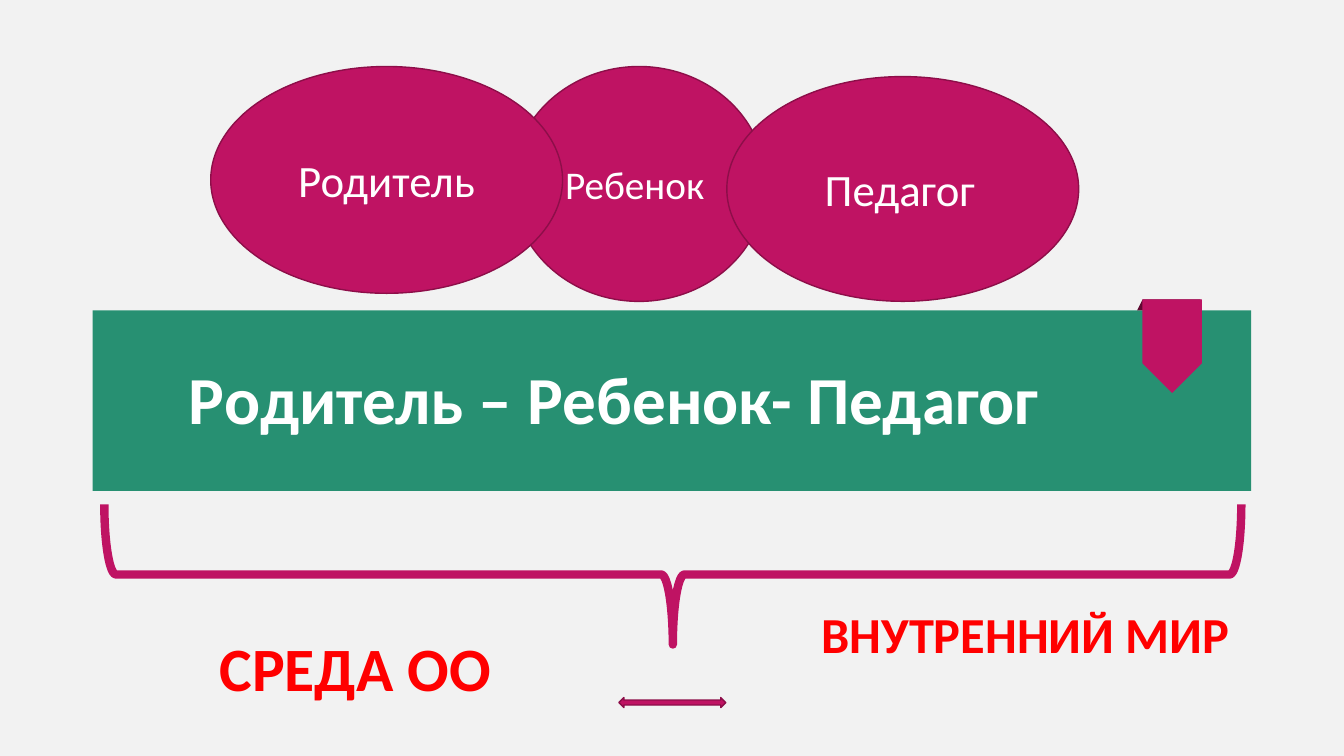
import pptx
import pptx.dml.color
import pptx.enum.shapes
import pptx.enum.text
import pptx.util

RGBColor = pptx.dml.color.RGBColor
Shape = pptx.enum.shapes.MSO_SHAPE
Align = pptx.enum.text.PP_ALIGN
Anchor = pptx.enum.text.MSO_ANCHOR
AutoSize = pptx.enum.text.MSO_AUTO_SIZE

PAPER = RGBColor(0xF2, 0xF2, 0xF2)
GREEN = RGBColor(0x27, 0x90, 0x72)
MAGENTA = RGBColor(0xBF, 0x13, 0x63)
OUTLINE = RGBColor(0x8D, 0x0E, 0x49)
FOLD = RGBColor(0x60, 0x09, 0x32)
WHITE = RGBColor(0xFF, 0xFF, 0xFF)
RED = RGBColor(0xFF, 0x00, 0x00)

TITLE_ONLY = 5


class SlideBuilder:
    """Places elements by left, top, width and height in percent of the slide."""

    font = "Calibri"

    def __init__(self, deck):
        self.width, self.height = deck.slide_width, deck.slide_height
        self.page = deck.slides.add_slide(deck.slide_layouts[TITLE_ONLY])
        self.page.background.fill.solid()
        self.page.background.fill.fore_color.rgb = PAPER

    def across(self, share):
        return round(self.width * share / 100)

    def down(self, share):
        return round(self.height * share / 100)

    def place(self, area):
        left, top, width, height = area
        return self.across(left), self.down(top), self.across(width), self.down(height)

    def shape(self, kind, area, fill=None, line=None, weight=1, turned=False):
        """Add a preset shape; a turned one fills the area after a quarter turn."""
        left, top, width, height = self.place(area)
        if turned:
            left, top = left + (width - height) // 2, top + (height - width) // 2
            width, height = height, width
        shape = self.page.shapes.add_shape(kind, left, top, width, height)
        shape.rotation = 90 if turned else 0
        shape.shadow.inherit = False
        if fill is None:
            shape.fill.background()
        else:
            shape.fill.solid()
            shape.fill.fore_color.rgb = fill
        if line is None:
            shape.line.fill.background()
        else:
            shape.line.color.rgb = line
            shape.line.width = pptx.util.Pt(weight)
        return shape

    def add_span(self, para, text, size, color, bold=False):
        span = para.add_run()
        span.text = text
        span.font.name = self.font
        span.font.size = pptx.util.Pt(size)
        span.font.bold = bold
        span.font.color.rgb = color

    def ellipse(self, area, spans):
        ellipse = self.shape(Shape.OVAL, area, MAGENTA, OUTLINE)
        ellipse.text_frame.vertical_anchor = Anchor.MIDDLE
        para = ellipse.text_frame.paragraphs[0]
        para.alignment = Align.CENTER
        for text, size in spans:
            self.add_span(para, text, size, WHITE)

    def label(self, area, text, size):
        box = self.page.shapes.add_textbox(*self.place(area))
        box.text_frame.word_wrap = True
        box.text_frame.auto_size = AutoSize.SHAPE_TO_FIT_TEXT
        self.add_span(box.text_frame.paragraphs[0], text, size, RED, bold=True)

    def title(self, area, text, size, right_margin, above):
        """Fill the title and bring it in front of the shape given as above."""
        title = self.page.shapes.title
        title.left, title.top, title.width, title.height = self.place(area)
        above.element.addnext(title.element)
        frame = title.text_frame
        frame.auto_size = AutoSize.NONE
        frame.word_wrap = True
        frame.vertical_anchor = Anchor.MIDDLE
        frame.margin_right = self.across(right_margin)
        para = frame.paragraphs[0]
        para.alignment = Align.CENTER
        para.line_spacing = 0.9
        self.add_span(para, text, size, WHITE, bold=True)


def main():
    deck = pptx.Presentation()
    deck.slide_width = pptx.util.Inches(13.33)
    deck.slide_height = pptx.util.Inches(7.5)
    slide = SlideBuilder(deck)

    slide.shape(Shape.RECTANGLE, (6.9, 41.07, 86.2, 23.87), GREEN)
    fold = slide.shape(Shape.PARALLELOGRAM, (84.6, 39.6, 4.73, 1.47), FOLD)
    fold.adjustments[0] = 0.51
    ribbon = slide.shape(Shape.PENTAGON, (85, 39.6, 4.43, 12.4), MAGENTA, turned=True)
    slide.title((6.9, 41.33, 86.27, 23.87), "Родитель – Ребенок- Педагог", 48,
                right_margin=9.45, above=ribbon)

    slide.ellipse((38.1, 8.8, 18.9, 31.07), [("Ребенок ", 28)])
    slide.ellipse((15.68, 8.8, 26.18, 30), [("Родитель", 32)])
    slide.ellipse((54.08, 10.13, 26.18, 29.73), [("Педагог", 32), (" ", 18)])

    slide.shape(Shape.RIGHT_BRACE, (7.76, 66.73, 84.6, 18.53),
                line=MAGENTA, weight=6, turned=True)
    slide.label((15.6, 82.67, 24.08, 11.2), "СРЕДА ОО", 44)
    slide.label((60.38, 79.07, 35.18, 9.47), "ВНУТРЕННИЙ МИР", 36)
    slide.shape(Shape.LEFT_RIGHT_ARROW, (46.05, 92.27, 7.95, 1.33), MAGENTA, OUTLINE)

    deck.save("out.pptx")


if __name__ == "__main__":
    main()
